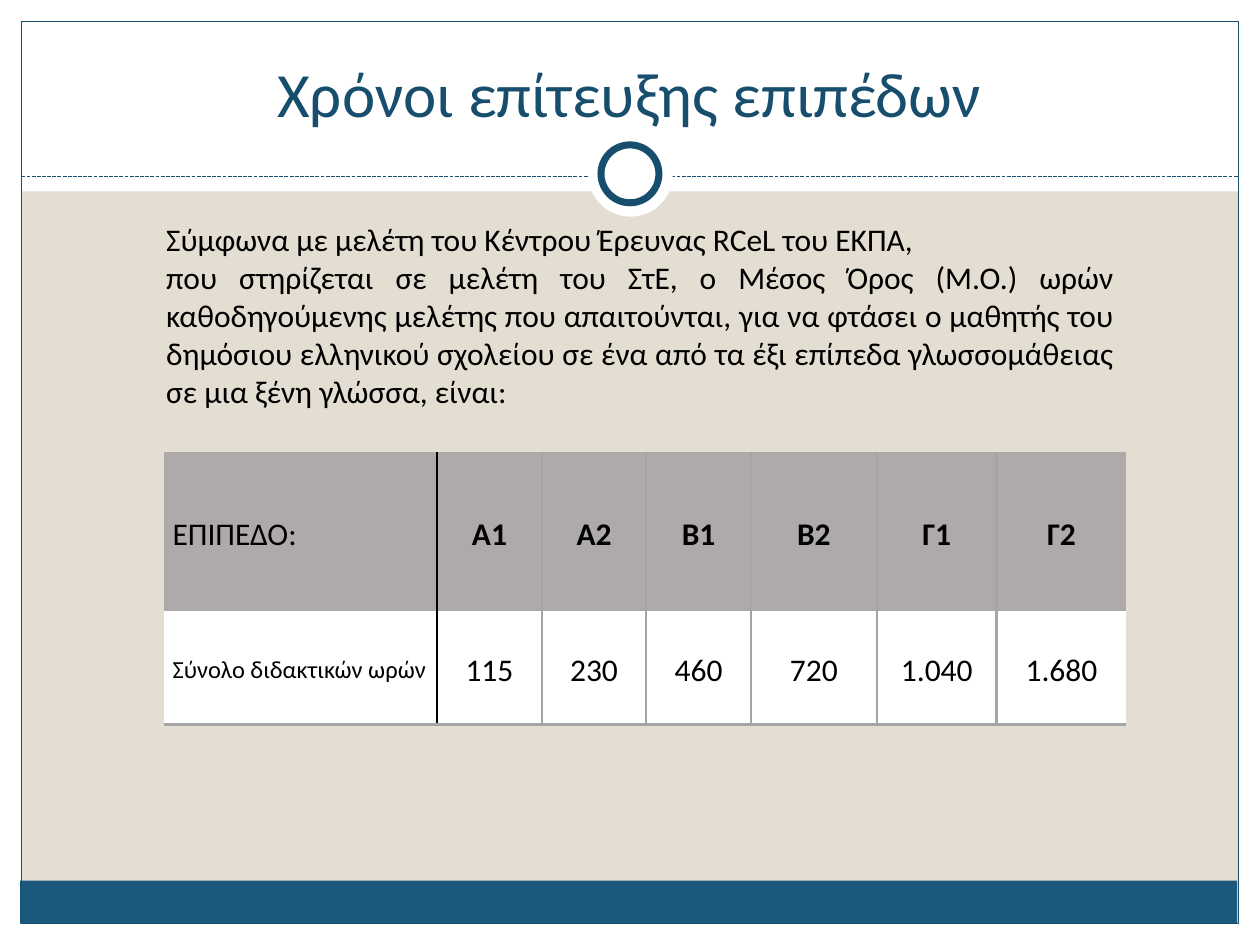
from dataclasses import dataclass

from lxml import etree
from pptx import Presentation
from pptx import util as u
from pptx.dml.color import RGBColor
from pptx.enum import dml, shapes, text
from pptx.oxml import ns


@dataclass(frozen=True)
class Theme:
    font: str = "Calibri"
    page: str = "E3DED1"
    white: str = "FFFFFF"
    black: str = "000000"
    navy: str = "184E6D"
    footer: str = "1B587C"
    header: str = "AEAAAA"
    grid: str = "A5A5A5"
    title_size: int = 36
    body_size: int = 18
    label_size: int = 14


THEME = Theme()
RECT = shapes.MSO_SHAPE.RECTANGLE
OVAL = shapes.MSO_SHAPE.OVAL
ALIGN = text.PP_ALIGN
ANCHOR = text.MSO_ANCHOR
INTRO = [
    "Σύμφωνα με μελέτη του Κέντρου Έρευνας RCeL του ΕΚΠΑ, ",
    "που στηρίζεται σε μελέτη του ΣτΕ, ο Μέσος Όρος (Μ.Ο.) ωρών "
    "καθοδηγούμενης μελέτης που απαιτούνται, για να φτάσει ο μαθητής του "
    "δημόσιου ελληνικού σχολείου σε ένα από τα έξι επίπεδα γλωσσομάθειας "
    "σε μια ξένη γλώσσα, είναι:",
]
LEVELS = ["ΕΠΙΠΕΔΟ:", "A1", "A2", "B1", "B2", "Γ1", "Γ2"]
HOURS = ["Σύνολο διδακτικών ωρών", "115", "230", "460", "720", "1.040", "1.680"]
COL_WIDTHS = [2.17, 0.83, 0.83, 0.83, 1, 0.95, 1.03]
ROW_HEIGHTS = [1.26, 0.9]


def rgb(color):
    return RGBColor.from_string(color)


def set_all(target, values):
    for name, value in values.items():
        setattr(target, name, value)


class SlideBuilder:
    def __init__(self, slide, theme):
        self.s = slide
        self.theme = theme

    def background(self, color):
        fill = self.s.background.fill
        fill.solid()
        fill.fore_color.rgb = rgb(color)

    def shape(self, kind, box, fill=None, line=None, width=0.75):
        sp = self.s.shapes.add_shape(kind, *map(u.Inches, box))
        sp.shadow.inherit = False
        if fill:
            sp.fill.solid()
            sp.fill.fore_color.rgb = rgb(fill)
        else:
            sp.fill.background()
        if line:
            sp.line.color.rgb = rgb(line)
            sp.line.width = u.Pt(width)
        else:
            sp.line.fill.background()

    def dashed_line(self, x1, x2, y):
        cx = self.s.shapes.add_connector(
            shapes.MSO_CONNECTOR.STRAIGHT, *map(u.Inches, (x1, y, x2, y)))
        cx.line.color.rgb = rgb(self.theme.navy)
        set_all(cx.line, {"width": u.Pt(0.75),
                          "dash_style": dml.MSO_LINE.SQUARE_DOT})
        # SQUARE_DOT gives sysDot; the divider needs the longer sysDash
        sp_pr = cx._element.spPr
        next(sp_pr.iter(ns.qn("a:prstDash"))).set("val", "sysDash")
        etree.SubElement(sp_pr, ns.qn("a:effectLst"))

    def add_text(self, p, content, size, color, align, bold=False, spacing=None):
        set_all(p, {"alignment": align, "line_spacing": spacing})
        r = p.add_run()
        r.text = content
        set_all(r.font, {"name": self.theme.font, "size": u.Pt(size), "bold": bold})
        r.font.color.rgb = rgb(color)

    def text_box(self, box, paragraphs, size, color, align, anchor=ANCHOR.TOP):
        tf = self.s.shapes.add_textbox(*map(u.Inches, box)).text_frame
        set_all(tf, {"word_wrap": True, "vertical_anchor": anchor})
        for i, content in enumerate(paragraphs):
            p = tf.add_paragraph() if i else tf.paragraphs[0]
            self.add_text(p, content, size, color, align)

    def borders(self, cell, edges):
        """Draw the given {edge: (color, points)}; hide the other edges."""
        tc_pr = cell._tc.get_or_add_tcPr()
        for i, edge in enumerate("LRTB"):
            ln = etree.Element(ns.qn(f"a:ln{edge}"))
            tc_pr.insert(i, ln)
            if edge in edges:
                color, points = edges[edge]
                ln.set("w", str(int(u.Pt(points))))
                fill = etree.SubElement(ln, ns.qn("a:solidFill"))
                etree.SubElement(fill, ns.qn("a:srgbClr"), val=color)
            else:
                ln.set("w", "0")
                etree.SubElement(ln, ns.qn("a:noFill"))

    def table(self, left, top, rows, widths, heights):
        t = self.theme
        frame = self.s.shapes.add_table(
            len(rows), len(widths), u.Inches(left), u.Inches(top),
            u.Inches(sum(widths)), u.Inches(sum(heights)))
        tbl = frame.table
        set_all(tbl, {"first_row": False, "horz_banding": False})
        for col, width in zip(tbl.columns, widths):
            col.width = u.Inches(width)
        for row, height in zip(tbl.rows, heights):
            row.height = u.Inches(height)

        label_rule, grid = (t.black, 1), (t.grid, 1.5)
        last_row, last_col = len(rows) - 1, len(widths) - 1
        for i, row in enumerate(rows):
            for j, content in enumerate(row):
                cell = tbl.cell(i, j)
                set_all(cell, {"margin_left": u.Inches(0.07),
                               "margin_right": u.Inches(0.07),
                               "margin_top": 0, "margin_bottom": 0,
                               "vertical_anchor": ANCHOR.MIDDLE})
                cell.fill.solid()
                cell.fill.fore_color.rgb = rgb(t.white if i else t.header)
                edges = {}
                if j > 0:
                    edges["L"] = label_rule if j == 1 else grid
                if j < last_col:
                    edges["R"] = label_rule if j == 0 else grid
                if i == last_row:
                    edges["B"] = grid
                self.borders(cell, edges)
                self.add_text(cell.text_frame.paragraphs[0], content,
                              t.label_size if i and not j else t.body_size,
                              t.black, ALIGN.CENTER if j else ALIGN.LEFT,
                              bold=i == 0 and j > 0, spacing=1.15)


def main():
    t = THEME
    prs = Presentation()
    set_all(prs, {"slide_width": u.Inches(10), "slide_height": u.Inches(7.5)})
    b = SlideBuilder(prs.slides.add_slide(prs.slide_layouts[6]), t)

    b.background(t.page)
    margins = [(0, 7.33, 10, 0.17), (0, 0, 10, 1.52),
               (0, 0, 0.17, 7.5), (9.83, 0, 0.17, 7.5)]
    for box in margins:
        b.shape(RECT, box, fill=t.white)
    b.shape(RECT, (0.16, 6.99, 9.66, 0.34), fill=t.footer)
    b.shape(RECT, (0.17, 0.17, 9.66, 7.16), line=t.navy)
    b.dashed_line(0.17, 9.83, 1.4)
    b.shape(OVAL, (4.67, 1.05, 0.67, 0.67), fill=t.white)
    b.shape(OVAL, (4.77, 1.15, 0.46, 0.46), fill=t.white, line=t.navy, width=4)

    b.text_box((0.33, 0.25, 9.33, 0.83), ["Χρόνοι επίτευξης επιπέδων"],
               t.title_size, t.navy, ALIGN.CENTER, ANCHOR.BOTTOM)
    b.table(1.3, 3.59, [LEVELS, HOURS], COL_WIDTHS, ROW_HEIGHTS)
    b.text_box((1.22, 1.7, 7.72, 1.62), INTRO,
               t.body_size, t.black, ALIGN.JUSTIFY)
    prs.save("out.pptx")


if __name__ == "__main__":
    main()
